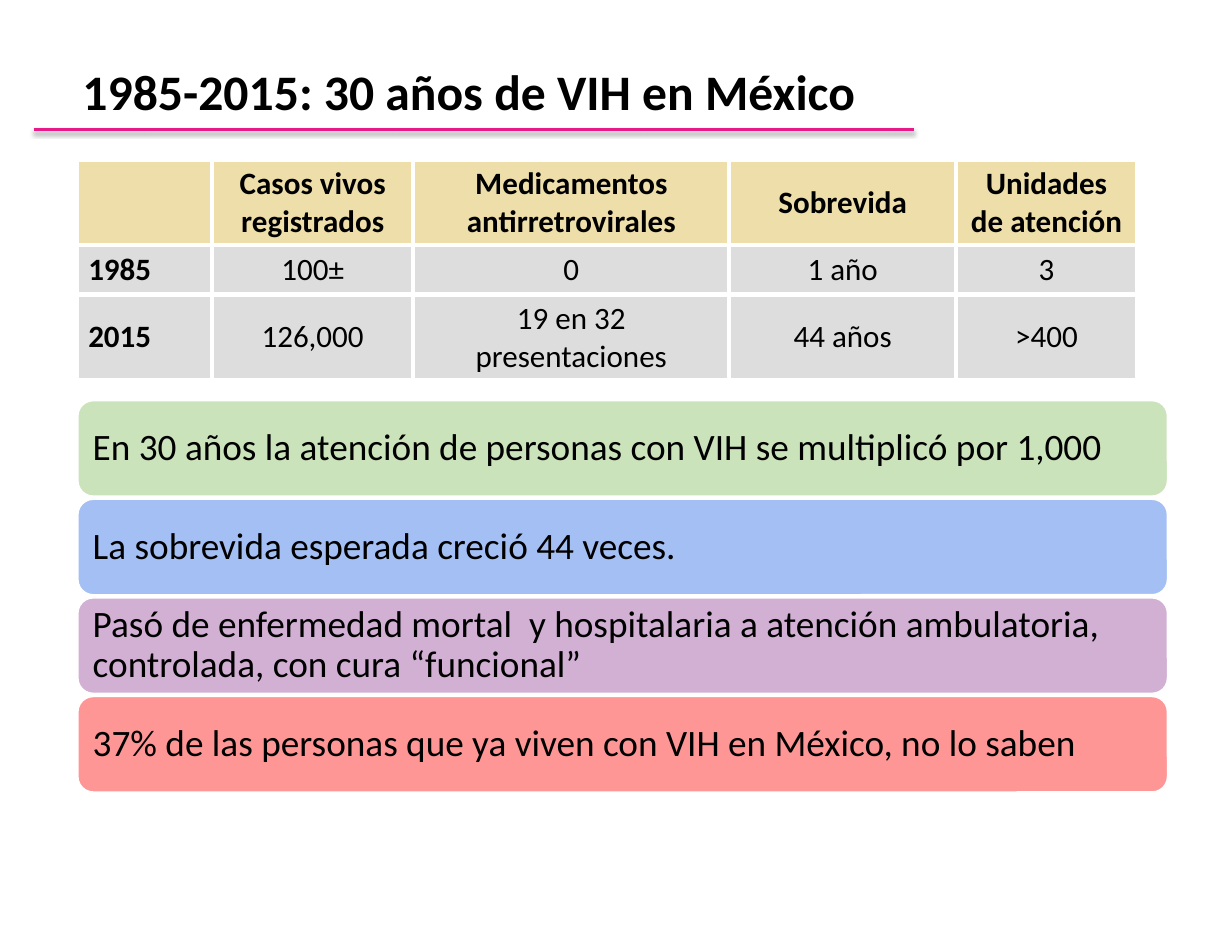
from lxml.etree import SubElement
from pptx import Presentation
from pptx.dml.color import RGBColor
from pptx.enum.shapes import MSO_CONNECTOR, MSO_SHAPE
from pptx.enum.text import MSO_ANCHOR, MSO_AUTO_SIZE, PP_ALIGN
from pptx.oxml import parse_xml
from pptx.oxml.ns import nsdecls, qn
from pptx.util import Inches, Pt

# Content
TITLE = "1985-2015: 30 años de VIH en México"
TABLE_ROWS = [
    ["", "Casos vivos\nregistrados", "Medicamentos antirretrovirales",
     "Sobrevida", "Unidades de atención"],
    ["1985", "100±", "0", "1 año", "3"],
    ["2015", "126,000", "19 en 32 presentaciones", "44 años", ">400"],
]
COLUMN_WIDTHS = [1.21, 1.8, 2.83, 2.03, 1.62]
ROW_HEIGHTS = [0.76, 0.44, 0.76]
MESSAGES = [
    ("En 30 años la atención de personas con VIH se multiplicó por 1,000",
     RGBColor(0xCB, 0xE3, 0xBB)),
    ("La sobrevida esperada creció 44 veces.", RGBColor(0xA4, 0xBF, 0xF3)),
    ("Pasó de enfermedad mortal  y hospitalaria a atención ambulatoria, "
     "controlada, con cura “funcional”", RGBColor(0xD2, 0xB0, 0xD4)),
    ("37% de las personas que ya viven con VIH en México, no lo saben",
     RGBColor(0xFF, 0x96, 0x96)),
]

# Style
FONT = "Calibri"
BLACK = RGBColor(0, 0, 0)
WHITE = RGBColor(0xFF, 0xFF, 0xFF)
PINK = RGBColor(0xE8, 0x1A, 0x8A)
SAND = RGBColor(0xED, 0xDE, 0xAA)
GRAY = RGBColor(0xDD, 0xDD, 0xDD)

# Layout in inches
LEFT = 0.69
TABLE_TOP = 1.43
BAR_TOP, BAR_WIDTH, BAR_HEIGHT, BAR_STEP = 3.58, 9.77, 0.87, 0.883


def write(frame, text, size, bold=False, align=PP_ALIGN.LEFT, line_spacing=None):
    """Write one paragraph for each line of the text."""
    for index, line in enumerate(text.split("\n")):
        para = frame.add_paragraph() if index else frame.paragraphs[0]
        para.alignment = align
        para.line_spacing = line_spacing
        para.font.size = Pt(size)
        if not line:
            continue
        span = para.add_run()
        span.text = line
        span.font.name = FONT
        span.font.size = Pt(size)
        span.font.bold = bold
        span.font.color.rgb = BLACK


def add_title(page):
    box = page.shapes.add_textbox(Inches(0.64), Inches(0.5), Inches(7.19), Inches(0.64))
    box.text_frame.word_wrap = False
    box.text_frame.auto_size = MSO_AUTO_SIZE.SHAPE_TO_FIT_TEXT
    write(box.text_frame, TITLE, 32, bold=True)

    rule = page.shapes.add_connector(
        MSO_CONNECTOR.STRAIGHT, Inches(0.3), Inches(1.16), Inches(8.18), Inches(1.16))
    rule.line.color.rgb = PINK
    rule.line.width = Pt(1.5)
    rule._element.spPr.append(parse_xml(
        f'<a:effectLst {nsdecls("a")}>'
        f'<a:outerShdw blurRad="{Pt(3.1)}" dist="{Pt(1.8)}" dir="5400000" rotWithShape="0">'
        '<a:srgbClr val="000000"><a:alpha val="35000"/></a:srgbClr>'
        '</a:outerShdw></a:effectLst>'))


def add_borders(cell):
    properties = cell._tc.get_or_add_tcPr()
    for side in ("a:lnL", "a:lnR", "a:lnT", "a:lnB"):
        border = SubElement(properties, qn(side), w=str(Pt(3)))
        fill = SubElement(border, qn("a:solidFill"))
        SubElement(fill, qn("a:srgbClr"), val=str(WHITE))


def add_comparison_table(page):
    table = page.shapes.add_table(
        len(TABLE_ROWS), len(COLUMN_WIDTHS), Inches(LEFT), Inches(TABLE_TOP),
        Inches(sum(COLUMN_WIDTHS)), Inches(sum(ROW_HEIGHTS))).table
    table.first_row = table.horz_banding = False
    for column, width in zip(table.columns, COLUMN_WIDTHS):
        column.width = Inches(width)
    for row_index, texts in enumerate(TABLE_ROWS):
        table.rows[row_index].height = Inches(ROW_HEIGHTS[row_index])
        for column_index, text in enumerate(texts):
            is_header, is_year = row_index == 0, column_index == 0
            cell = table.cell(row_index, column_index)
            add_borders(cell)
            cell.fill.solid()
            cell.fill.fore_color.rgb = SAND if is_header else GRAY
            cell.vertical_anchor = MSO_ANCHOR.MIDDLE
            write(cell.text_frame, text, 20, bold=is_header or is_year,
                  align=PP_ALIGN.LEFT if is_year else PP_ALIGN.CENTER)


def add_message_bars(page):
    for index, (text, color) in enumerate(MESSAGES):
        bar = page.shapes.add_shape(
            MSO_SHAPE.ROUNDED_RECTANGLE, Inches(LEFT), Inches(BAR_TOP + index * BAR_STEP),
            Inches(BAR_WIDTH), Inches(BAR_HEIGHT))
        bar.shadow.inherit = False
        bar.fill.solid()
        bar.fill.fore_color.rgb = color
        bar.line.color.rgb = WHITE
        bar.line.width = Pt(2)
        frame = bar.text_frame
        frame.word_wrap = True
        frame.vertical_anchor = MSO_ANCHOR.MIDDLE
        # The rounded corners already inset the text a little
        frame.margin_left = frame.margin_right = Inches(0.1)
        frame.margin_top = frame.margin_bottom = Inches(0.05)
        write(frame, text, 24, line_spacing=0.9)


def main():
    deck = Presentation()
    deck.slide_width, deck.slide_height = Inches(11.03), Inches(8.47)
    page = deck.slides.add_slide(deck.slide_layouts[6])
    add_title(page)
    add_comparison_table(page)
    add_message_bars(page)
    deck.save("out.pptx")


if __name__ == "__main__":
    main()
